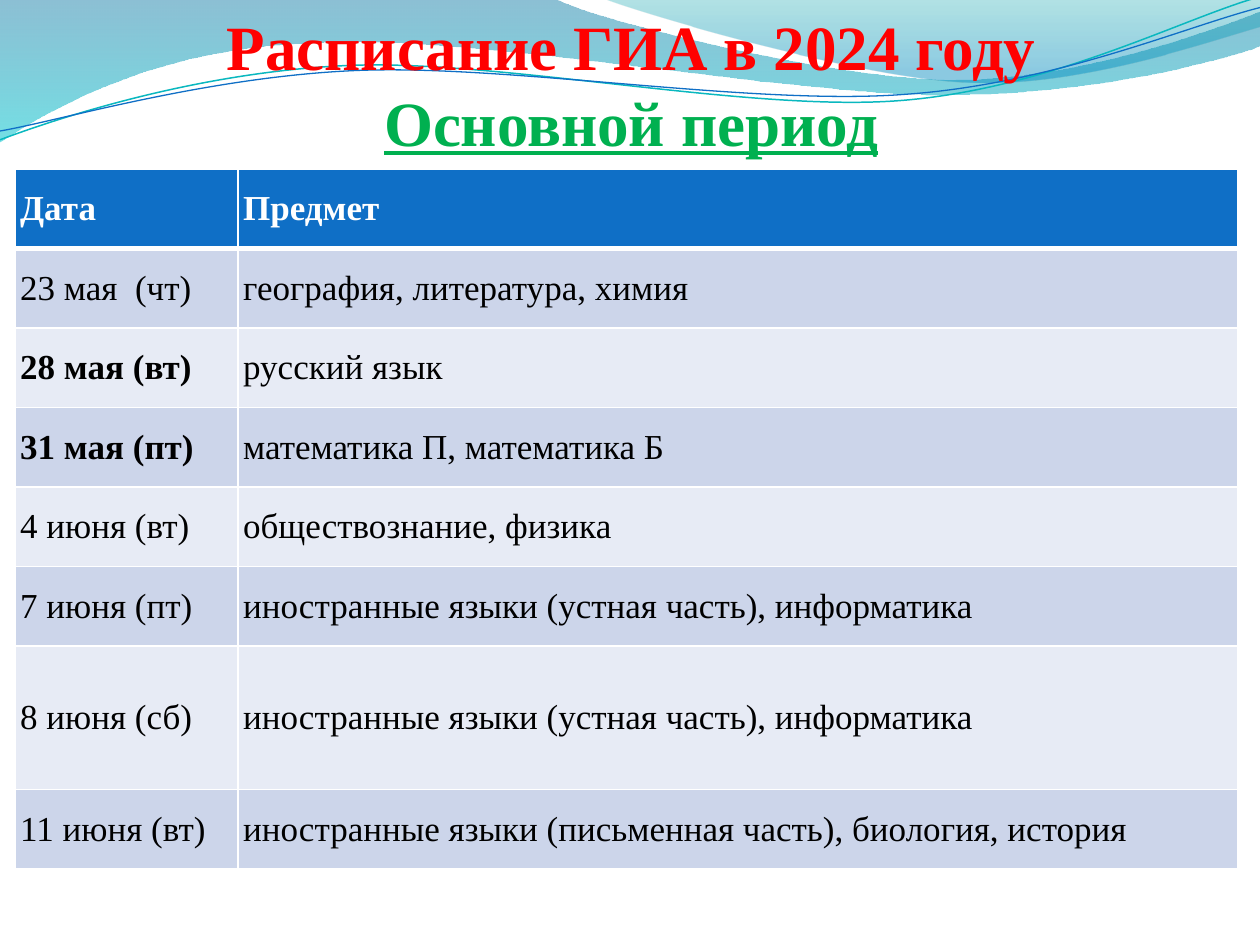
import pptx
import pptx.dml.color
import pptx.enum.text
import pptx.oxml
import pptx.oxml.ns
import pptx.util
from lxml import etree

Inches = pptx.util.Inches
Pt = pptx.util.Pt
RGBColor = pptx.dml.color.RGBColor
qn = pptx.oxml.ns.qn

FONT = "Times New Roman"
RED = RGBColor(0xFF, 0x00, 0x00)
GREEN = RGBColor(0x00, 0xB0, 0x50)
WHITE = RGBColor(0xFF, 0xFF, 0xFF)
BLACK = RGBColor(0x00, 0x00, 0x00)
BLUE = RGBColor(0x0F, 0x6F, 0xC6)
TEAL = RGBColor(0x0A, 0xB8, 0xBF)
BAND_DARK = RGBColor(0xCC, 0xD5, 0xEA)
BAND_LIGHT = RGBColor(0xE7, 0xEB, 0xF5)
DEEP_BLUE = RGBColor(0x00, 0x74, 0xA1)
AQUA = RGBColor(0x00, 0xC6, 0xCF)
SEA_GREEN = RGBColor(0x00, 0xA1, 0xA9)
SKY_BLUE = RGBColor(0x00, 0x8B, 0xBF)

WAVES = [
    ([(0, 0), (4.4, -0.01), (4.76, 0.17, 6.64, 0.63, 7.58, 0.63),
      (8.53, 0.63, 9.58, 0.26, 10, 0.09), (10.01, 0.36),
      (9.83, 0.44, 8.7, 0.76, 7.46, 0.75), (6.22, 0.75, 3.82, 0.28, 2.57, 0.34),
      (1.29, 0.36, 0.46, 0.83, -0.01, 1.13), (0, 0)],
     [(0, DEEP_BLUE, 45), (1, AQUA, 55)]),
    ([(4.79, -0.01), (5.09, 0.11, 6.82, 0.62, 7.69, 0.65),
      (8.56, 0.69, 9.61, 0.32, 10, 0.21), (10, 0), (4.79, -0.01)],
     [(0, SEA_GREEN, 30), (0.8, SKY_BLUE, 45)]),
]
STRANDS = [
    ([(0, 1.11), (0.48, 0.93, 1.58, 0.57, 2.77, 0.52),
      (3.95, 0.47, 5.93, 0.89, 7.13, 0.8), (8.33, 0.71, 9.38, 0.15, 9.98, -0.02)],
     TEAL, 0.85),
    ([(0, 1.04), (0.47, 0.96, 1.64, 0.61, 2.83, 0.56),
      (4.03, 0.51, 5.97, 0.84, 7.17, 0.75), (8.36, 0.67, 9.41, 0.21, 10, 0.06)],
     BLUE, 0.75),
]
TITLE_LINES = [("Расписание ГИА в 2024 году", RED, False), ("Основной период", GREEN, True)]
SCHEDULE = [
    ("Дата", "Предмет"),
    ("23 мая  (чт)", "география, литература, химия"),
    ("28 мая (вт)", "русский язык"),
    ("31 мая (пт)", "математика П, математика Б"),
    ("4 июня (вт)", "обществознание, физика"),
    ("7 июня (пт)", "иностранные языки (устная часть), информатика"),
    ("8 июня (сб)", "иностранные языки (устная часть), информатика"),
    ("11 июня (вт)", "иностранные языки (письменная часть), биология, история"),
]
MANDATORY_ROWS = (2, 3)
TALL_ROW = 6


def add_curve(slide, left, top, segments, close):
    """Add an outline of lines and Bezier segments relative to the given corner."""
    points = [(left + Inches(segment[i]), top + Inches(segment[i + 1]))
              for segment in segments for i in range(0, len(segment), 2)]
    builder = slide.shapes.build_freeform(*points[0], scale=1.0)
    builder.add_line_segments(points[1:], close=close)
    curve = builder.convert_to_shape()
    curve.shadow.inherit = False
    lines = iter(list(curve.element.iter(qn("a:lnTo"))))
    for segment in segments[1:]:
        bend = next(lines)
        if len(segment) == 6:
            bezier = etree.Element(qn("a:cubicBezTo"))
            bend.addprevious(bezier)
            for line in (bend, next(lines), next(lines)):
                bezier.append(line[0])
                line.getparent().remove(line)
    return curve


def add_waves(slide, left, top):
    """Draw the translucent waves and thin strands of the header."""
    for segments, stops in WAVES:
        wave = add_curve(slide, left, top, segments, True)
        wave.line.fill.background()
        wave.fill.gradient()
        wave.fill.gradient_angle = 270
        for stop, (position, color, _) in zip(wave.fill.gradient_stops, stops):
            stop.position = position
            stop.color.rgb = color
        for node, (_, _, opacity) in zip(wave.element.spPr.iter(qn("a:srgbClr")), stops):
            etree.SubElement(node, qn("a:alpha")).set("val", str(opacity * 1000))
    for segments, color, width in STRANDS:
        strand = add_curve(slide, left, top, segments, False)
        strand.fill.background()
        strand.line.color.rgb = color
        strand.line.width = Pt(width)


def format_font(font, size, color, bold):
    """Set the typeface, size, colour and weight of a font."""
    font.name = FONT
    font.size = Pt(size)
    font.color.rgb = color
    font.bold = bold


def add_title(slide, left, top, width, height):
    """Place the two-line heading at the bottom of its box."""
    frame = slide.shapes.add_textbox(left, top, width, height).text_frame
    frame.word_wrap = True
    frame.vertical_anchor = pptx.enum.text.MSO_ANCHOR.BOTTOM
    frame.margin_left = frame.margin_right = frame.margin_bottom = 0
    heading = frame.paragraphs[0]
    heading.text = "\v".join(line for line, _, _ in TITLE_LINES)
    heading.alignment = pptx.enum.text.PP_ALIGN.CENTER
    for run, (_, color, underline) in zip(heading.runs, TITLE_LINES):
        format_font(run.font, 36, color, True)
        run.font.underline = underline


def add_bottom_border(cell, color, width):
    """Rule off the bottom of a cell."""
    border = etree.Element(qn("a:lnB"), w=str(Pt(width)))
    fill = etree.SubElement(border, qn("a:solidFill"))
    etree.SubElement(fill, qn("a:srgbClr")).set("val", str(color))
    cell.fill.solid()
    cell._tc.tcPr.insert(0, border)


def add_schedule(slide, left, top, width, height):
    """Fill the box with the exam timetable."""
    table = slide.shapes.add_table(len(SCHEDULE), 2, left, top, width, height).table
    date_width = Inches(1.77)
    table.columns[0].width = date_width
    table.columns[1].width = width - date_width
    tall_height = Inches(1.14)
    row_height = (height - tall_height) // (len(SCHEDULE) - 1)
    for index, entry in enumerate(SCHEDULE):
        table.rows[index].height = tall_height if index == TALL_ROW else row_height
        header = index == 0
        band = BLUE if header else BAND_DARK if index % 2 else BAND_LIGHT
        for column, text in enumerate(entry):
            cell = table.cell(index, column)
            if header:
                add_bottom_border(cell, WHITE, 3)
            cell.fill.solid()
            cell.fill.fore_color.rgb = band
            cell.vertical_anchor = pptx.enum.text.MSO_ANCHOR.MIDDLE
            cell.margin_left = cell.margin_right = Inches(0.04)
            cell.margin_top = cell.margin_bottom = Inches(0.04)
            cell.text_frame.text = text
            bold = header or (column == 0 and index in MANDATORY_ROWS)
            format_font(cell.text_frame.paragraphs[0].runs[0].font, 20,
                        WHITE if header else BLACK, bold)


def main():
    """Build and save the timetable slide."""
    presentation = pptx.Presentation()
    presentation.slide_width = Inches(10)
    presentation.slide_height = Inches(7.5)
    slide = presentation.slides.add_slide(presentation.slide_layouts[6])
    add_waves(slide, Inches(0), Inches(0))
    add_title(slide, Inches(0.51), Inches(0.01), Inches(9), Inches(1.25))
    add_schedule(slide, Inches(0.12), Inches(1.34), Inches(9.7), Inches(5.56))
    presentation.save("out.pptx")


if __name__ == "__main__":
    main()
